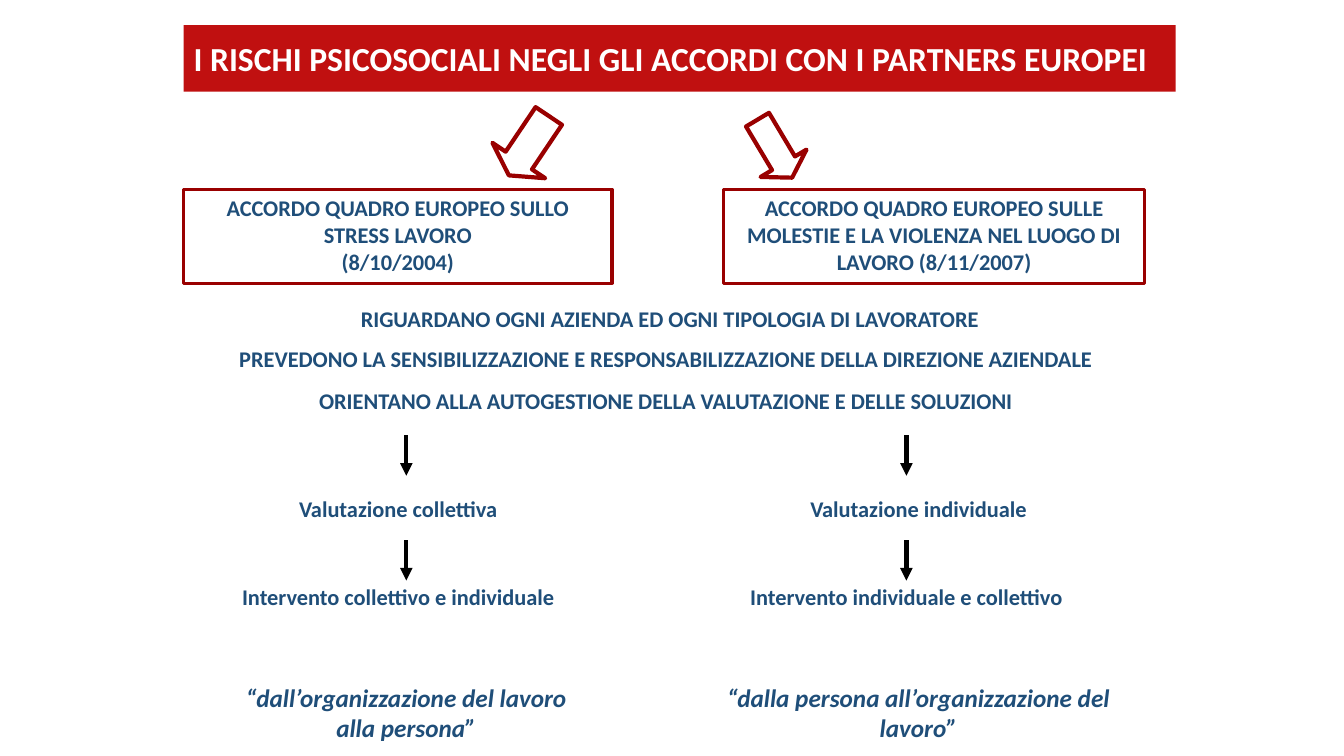
from lxml.etree import SubElement
from pptx import Presentation
from pptx.dml.color import RGBColor
from pptx.enum.shapes import MSO_CONNECTOR as Connector, MSO_SHAPE as Preset
from pptx.enum.text import MSO_ANCHOR as Anchor, MSO_AUTO_SIZE as AutoSize, PP_ALIGN as Align
from pptx.oxml.ns import qn
from pptx.util import Inches, Pt

RED, DARK_RED, BLUE, WHITE, BLACK = "C01010", "990000", "1F4E79", "FFFFFF", "000000"

TITLE = "I RISCHI PSICOSOCIALI NEGLI GLI ACCORDI CON I PARTNERS EUROPEI"
# text, top, wrapped and centred
PRINCIPLES = [
    ("RIGUARDANO OGNI AZIENDA ED OGNI TIPOLOGIA DI LAVORATORE", (3.48, 2.98, 6.42, 0.37), False),
    ("PREVEDONO LA SENSIBILIZZAZIONE E RESPONSABILIZZAZIONE DELLA DIREZIONE AZIENDALE",
     (1.74, 3.38, 9.73, 0.37), True),
    ("ORIENTANO ALLA AUTOGESTIONE DELLA VALUTAZIONE E DELLE SOLUZIONI",
     (1.74, 3.79, 9.73, 0.37), True),
]
BRANCHES = [
    {
        "agreement": ["ACCORDO QUADRO EUROPEO SULLO STRESS LAVORO", "(8/10/2004)"],
        "frame": (1.82, 4.25),
        "block_arrow": (4.93, 1.09, 0.63, 0.71), "rotation": 33.9, "head": 0.281,
        "left": 2.06, "widths": (3.78, 3.78, 3.94), "arrow_x": 4.03,
        "steps": ["Valutazione collettiva", "Intervento collettivo e individuale"],
        "motto": ["“dall’organizzazione del lavoro", "alla persona”"],
    },
    {
        "agreement": ["ACCORDO QUADRO EUROPEO SULLE MOLESTIE E LA VIOLENZA "
                      "NEL LUOGO DI LAVORO (8/11/2007)"],
        "frame": (7.18, 4.17),
        "block_arrow": (7.42, 1.14, 0.53, 0.67), "rotation": 329.2, "head": 0.313,
        "left": 7.1, "widths": (4.02, 3.78, 4.02), "arrow_x": 8.99,
        "steps": ["Valutazione individuale", "Intervento individuale e collettivo"],
        "motto": ["“dalla persona all’organizzazione del lavoro”"],
    },
]
FRAME_TOP, FRAME_HEIGHT = 1.88, 0.93
STEP_TOPS, STEP_HEIGHT = (4.86, 5.74), 0.37
MOTTO_TOP, MOTTO_HEIGHT = 6.72, 0.7
ARROW_TOPS, ARROW_LENGTH = (4.32, 5.36), 0.4


def color(value):
    return RGBColor.from_string(value)


def write(shape, lines, size=16, fill=BLUE, italic=False, align=Align.CENTER,
          anchor=Anchor.TOP, wrap=True, auto_size=AutoSize.SHAPE_TO_FIT_TEXT):
    frame = shape.text_frame
    frame.word_wrap, frame.auto_size, frame.vertical_anchor = wrap, auto_size, anchor
    for index, line in enumerate(lines):
        paragraph = frame.add_paragraph() if index else frame.paragraphs[0]
        paragraph.alignment = align
        run = paragraph.add_run()
        run.text = line
        font = run.font
        font.name, font.size, font.bold, font.italic = "Calibri", Pt(size), True, italic
        font.color.rgb = color(fill)


def add_text(slide, lines, box, **text_format):
    write(slide.shapes.add_textbox(*map(Inches, box)), lines, **text_format)


def add_outline(slide, preset, box, width):
    shape = slide.shapes.add_shape(preset, *map(Inches, box))
    shape.shadow.inherit = False
    shape.fill.background()
    shape.line.color.rgb = color(DARK_RED)
    shape.line.width = Pt(width)
    return shape


def add_down_arrow(slide, x, top):
    ends = map(Inches, (x, top, x, top + ARROW_LENGTH))
    arrow = slide.shapes.add_connector(Connector.STRAIGHT, *ends)
    arrow.line.color.rgb = color(BLACK)
    arrow.line.width = Pt(3)
    SubElement(arrow.line._get_or_add_ln(), qn("a:tailEnd"), type="triangle")
    SubElement(arrow._element.spPr, qn("a:effectLst"))


def add_title(slide):
    title = slide.shapes.title
    title.left, title.top, title.width, title.height = map(Inches, (1.82, 0.25, 9.84, 0.66))
    title.fill.solid()
    title.fill.fore_color.rgb = color(RED)
    write(title, [TITLE], size=24, fill=WHITE, align=Align.LEFT, anchor=Anchor.MIDDLE,
          auto_size=AutoSize.NONE)


def add_branch(slide, branch):
    left, widths = branch["left"], branch["widths"]
    frame_left, frame_width = branch["frame"]
    frame_box = (frame_left, FRAME_TOP, frame_width, FRAME_HEIGHT)
    write(add_outline(slide, Preset.RECTANGLE, frame_box, 2.25), branch["agreement"])

    block_arrow = add_outline(slide, Preset.DOWN_ARROW, branch["block_arrow"], 3)
    block_arrow.rotation = branch["rotation"]
    block_arrow.adjustments[1] = branch["head"]

    for step, top, width, arrow_top in zip(branch["steps"], STEP_TOPS, widths, ARROW_TOPS):
        add_down_arrow(slide, branch["arrow_x"], arrow_top)
        add_text(slide, [step], (left, top, width, STEP_HEIGHT))
    add_text(slide, branch["motto"], (left, MOTTO_TOP, widths[2], MOTTO_HEIGHT),
             size=18, italic=True)


def main():
    presentation = Presentation()
    presentation.slide_width, presentation.slide_height = Inches(13.33), Inches(7.5)
    slide = presentation.slides.add_slide(presentation.slide_layouts[5])
    add_title(slide)
    for text, box, centred in PRINCIPLES:
        add_text(slide, [text], box, wrap=centred, align=Align.CENTER if centred else Align.LEFT)
    for branch in BRANCHES:
        add_branch(slide, branch)
    presentation.save("out.pptx")


if __name__ == "__main__":
    main()
